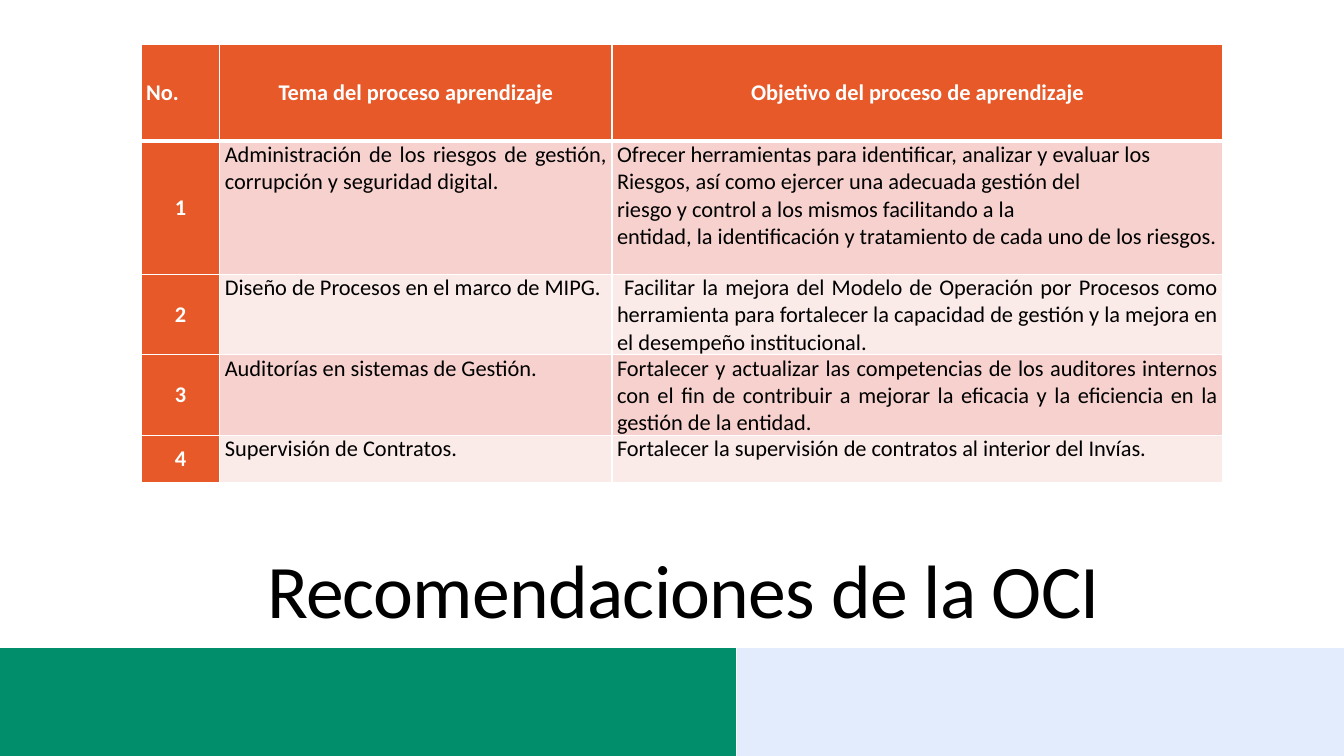
"""Build the slide listing the learning topics recommended by the OCI."""
import pptx
import pptx.dml.color
import pptx.enum.shapes
import pptx.enum.text
import pptx.oxml
import pptx.oxml.ns
import pptx.util
from pptx.util import Inches

THEME = {
    "font": "Calibri",
    "title_size": 54,
    "table_size": 16,
    "black": "000000",
    "white": "FFFFFF",
    "green": "018E6B",
    "pale_blue": "E2ECFD",
    "orange": "E75929",
    "bands": ("F6D1CD", "FAEAE8"),
}
ALIGN = pptx.enum.text.PP_ALIGN
ANCHOR = pptx.enum.text.MSO_ANCHOR


def style_text(text_frame, size, color, alignment, bold=False):
    for paragraph in text_frame.paragraphs:
        paragraph.alignment = alignment
        for run in paragraph.runs:
            run.font.name = THEME["font"]
            run.font.size = pptx.util.Pt(size)
            run.font.bold = bold
            run.font.color.rgb = pptx.dml.color.RGBColor.from_string(color)


def add_border(cell, side, points):
    cell._tc.get_or_add_tcPr().append(pptx.oxml.parse_xml(
        f'<a:{side} {pptx.oxml.ns.nsdecls("a")} w="{pptx.util.Pt(points)}">'
        f'<a:solidFill><a:srgbClr val="{THEME["white"]}"/></a:solidFill></a:{side}>'
    ))


presentation = pptx.Presentation()
presentation.slide_width = Inches(13.33)
presentation.slide_height = Inches(7.5)
slide = presentation.slides.add_slide(presentation.slide_layouts[6])

for left, width, color in ((-0.02, 7.32, "green"), (7.31, 6.02, "pale_blue")):
    band = slide.shapes.add_shape(
        pptx.enum.shapes.MSO_SHAPE.RECTANGLE,
        Inches(left), Inches(6.43), Inches(width), Inches(1.07),
    )
    band.shadow.inherit = False
    band.fill.solid()
    band.fill.fore_color.rgb = pptx.dml.color.RGBColor.from_string(THEME[color])
    band.line.fill.background()

title = slide.shapes.add_textbox(Inches(1.28), Inches(5.2), Inches(11), Inches(1.13))
title_frame = title.text_frame
title_frame.word_wrap = True
title_frame.vertical_anchor = ANCHOR.BOTTOM
title_frame.text = "Recomendaciones de la OCI"
style_text(title_frame, THEME["title_size"], THEME["black"], ALIGN.CENTER)
title_frame.paragraphs[0].line_spacing = 0.8
title_frame.paragraphs[0].runs[0]._r.get_or_add_rPr().set("spc", "-50")

rows = [
    ("No.", "Tema del proceso aprendizaje", "Objetivo del proceso de aprendizaje"),
    ("1", "Administración de los riesgos de gestión, corrupción y seguridad digital.",
     "Ofrecer herramientas para identificar, analizar y evaluar los\n"
     "Riesgos, así como ejercer una adecuada gestión del\n"
     "riesgo y control a los mismos facilitando a la\n"
     "entidad, la identificación y tratamiento de cada uno de los riesgos."),
    ("2", "Diseño de Procesos en el marco de MIPG.",
     " Facilitar la mejora del Modelo de Operación por Procesos como herramienta "
     "para fortalecer la capacidad de gestión y la mejora en el desempeño institucional."),
    ("3", "Auditorías en sistemas de Gestión.",
     "Fortalecer y actualizar las competencias de los auditores internos con el fin de "
     "contribuir a mejorar la eficacia y la eficiencia en la gestión de la entidad."),
    ("4", "Supervisión de Contratos.",
     "Fortalecer la supervisión de contratos al interior del Invías."),
]
column_widths = (0.78, 3.89, 6.06)
row_heights = (0.96, 1.32, 0.71, 0.71, 0.47)
table = slide.shapes.add_table(
    len(rows), len(column_widths), Inches(1.4), Inches(0.44),
    Inches(sum(column_widths)), Inches(sum(row_heights)),
).table
for column, width in zip(table.columns, column_widths):
    column.width = Inches(width)

for row_index, (texts, height) in enumerate(zip(rows, row_heights)):
    table.rows[row_index].height = Inches(height)
    for column_index, text in enumerate(texts):
        cell = table.cell(row_index, column_index)
        is_header = row_index == 0 or column_index == 0
        cell.text_frame.text = text
        cell.margin_left = cell.margin_right = Inches(0.05)
        cell.margin_top = cell.margin_bottom = 0
        cell.vertical_anchor = ANCHOR.MIDDLE if is_header else ANCHOR.TOP
        alignment = ALIGN.CENTER if is_header else ALIGN.JUSTIFY
        color = THEME["white"] if is_header else THEME["black"]
        style_text(cell.text_frame, THEME["table_size"], color, alignment, is_header)

        add_border(cell, "lnL", 1)
        add_border(cell, "lnR", 1)
        add_border(cell, "lnT", 3 if row_index == 1 else 1)
        add_border(cell, "lnB", 3 if row_index == 0 else 1)
        fill = THEME["orange"] if is_header else THEME["bands"][(row_index - 1) % 2]
        cell.fill.solid()
        cell.fill.fore_color.rgb = pptx.dml.color.RGBColor.from_string(fill)

table.cell(0, 0).text_frame.paragraphs[0].alignment = ALIGN.LEFT
table.cell(2, 2).vertical_anchor = ANCHOR.BOTTOM

presentation.save("out.pptx")
